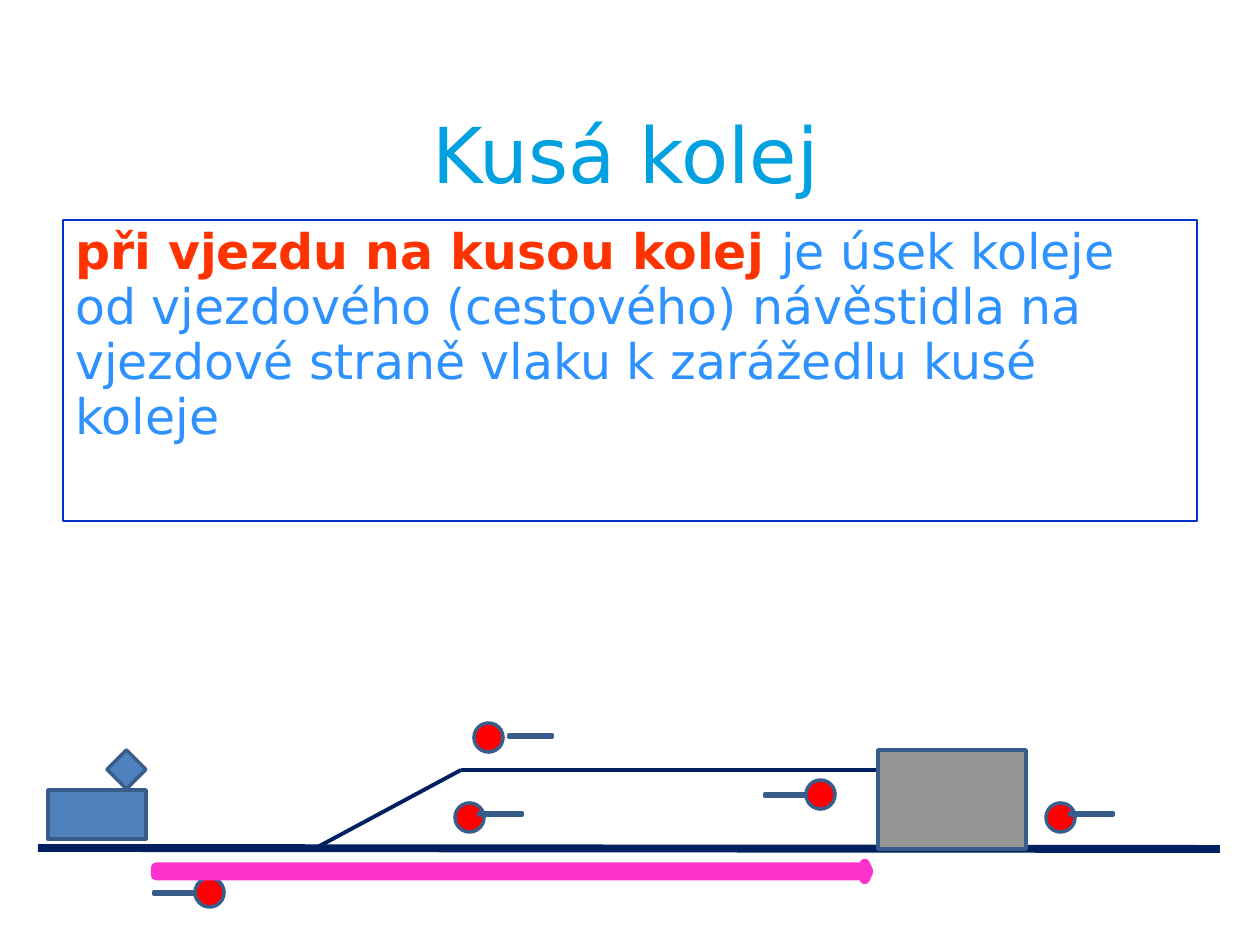
from lxml import etree
from pptx import Presentation
from pptx.dml.color import RGBColor
from pptx.enum.shapes import MSO_CONNECTOR, MSO_SHAPE
from pptx.enum.text import MSO_ANCHOR, PP_ALIGN
from pptx.oxml.ns import qn
from pptx.util import Emu, Pt

LINE = MSO_CONNECTOR.STRAIGHT
DISC = MSO_SHAPE.FLOWCHART_CONNECTOR
BAR = MSO_SHAPE.MATH_MINUS
BLOCK = MSO_SHAPE.FLOWCHART_PROCESS
GEM = MSO_SHAPE.DIAMOND
ARROW = MSO_SHAPE.RIGHT_ARROW
LEFT, MID = PP_ALIGN.LEFT, PP_ALIGN.CENTER
TOP, MIDDLE = MSO_ANCHOR.TOP, MSO_ANCHOR.MIDDLE

CYAN = RGBColor(0x00, 0xA1, 0xE0)
SKY = RGBColor(0x2D, 0x92, 0xFF)
ORANGE = RGBColor(0xFF, 0x33, 0x00)
FRAME = RGBColor(0x00, 0x33, 0xCC)
NAVY = RGBColor(0x00, 0x20, 0x60)
STEEL = RGBColor(0x4F, 0x81, 0xBD)
EDGE = RGBColor(0x38, 0x5D, 0x8A)
RED = RGBColor(0xFF, 0x00, 0x00)
PINK = RGBColor(0xFF, 0x33, 0xCC)
GREY = RGBColor(0x96, 0x96, 0x96)


def px(n):
    """Turn pixels into EMU."""
    return Emu(round(n * 914400 / 126))


def style(item, vals):
    """Set each attribute in a dict of format values."""
    for key, val in vals.items():
        setattr(item, key, val)


def write(slide, at, runs, size, align, anchor):
    """Add a wrapped text box of (text, colour, bold) runs and return it."""
    box = slide.shapes.add_textbox(*map(px, at))
    style(box.text_frame, {"word_wrap": True, "vertical_anchor": anchor})
    para = box.text_frame.paragraphs[0]
    style(para, {"alignment": align, "line_spacing": 0.93})
    for i, (text, color, bold) in enumerate(runs):
        run = para.add_run()
        run.text = text
        style(run.font, {"name": "DejaVu Sans", "size": Pt(size), "bold": bold})
        run.font.color.rgb = color
        if text.endswith("koleje ") and i < len(runs) - 1:
            para.add_line_break()
    return box


def shape(slide, kind, at, fill=STEEL, edge=EDGE, width=2):
    """Add a filled and outlined preset shape and return it."""
    item = slide.shapes.add_shape(kind, *map(px, at))
    item.shadow.inherit = False
    item.fill.solid()
    item.fill.fore_color.rgb = fill
    item.line.color.rgb = edge
    item.line.width = Pt(width)
    return item


def track(slide, ends, width):
    """Add a straight piece of track."""
    rail = slide.shapes.add_connector(LINE, *map(px, ends))
    rail.line.color.rgb = NAVY
    rail.line.width = Pt(width)
    etree.SubElement(rail._element.spPr, qn("a:effectLst"))


def signal(slide, disc, bar, front):
    """Add a signal of a disc and a bar, with the disc in front or behind."""
    parts = [(DISC, (*disc, 29, 29), RED), (BAR, (*bar, 59, 10), STEEL)]
    for kind, at, fill in reversed(parts) if front else parts:
        shape(slide, kind, at, fill)


def main():
    """Build the slide and save it."""
    deck = Presentation()
    style(deck, {"slide_width": px(1260), "slide_height": px(945)})
    slide = deck.slides.add_slide(deck.slide_layouts[6])

    write(slide, (59, 108, 1134, 100), [("Kusá kolej", CYAN, False)],
          44, MID, MIDDLE)
    box = write(slide, (63, 220, 1134, 301), [
        ("při vjezdu na kusou kolej ", ORANGE, True),
        ("je úsek koleje ", SKY, False),
        ("od vjezdového (cestového) návěstidla na vjezdové straně vlaku "
         "k zarážedlu kusé koleje", SKY, False),
    ], 28, LEFT, TOP)
    box.line.color.rgb = FRAME
    box.line.width = Pt(0.75)

    for ends, width in [((38, 848, 1220, 849), 4.5),
                        ((314, 849, 461, 770), 2.25),
                        ((461, 770, 878, 770), 2.25)]:
        track(slide, ends, width)

    signal(slide, (195, 878), (146, 888), True)
    signal(slide, (806, 780), (757, 790), True)
    signal(slide, (1046, 803), (1062, 809), False)
    route = shape(slide, ARROW, (156, 864, 712, 15), PINK, PINK, 6)
    route.adjustments[1] = 0.22
    signal(slide, (474, 723), (501, 731), False)
    signal(slide, (455, 803), (471, 809), False)

    shape(slide, BLOCK, (48, 790, 98, 49))
    shape(slide, GEM, (107, 750, 39, 39))
    shape(slide, BLOCK, (878, 750, 148, 99), GREY)
    deck.save("out.pptx")


if __name__ == "__main__":
    main()
